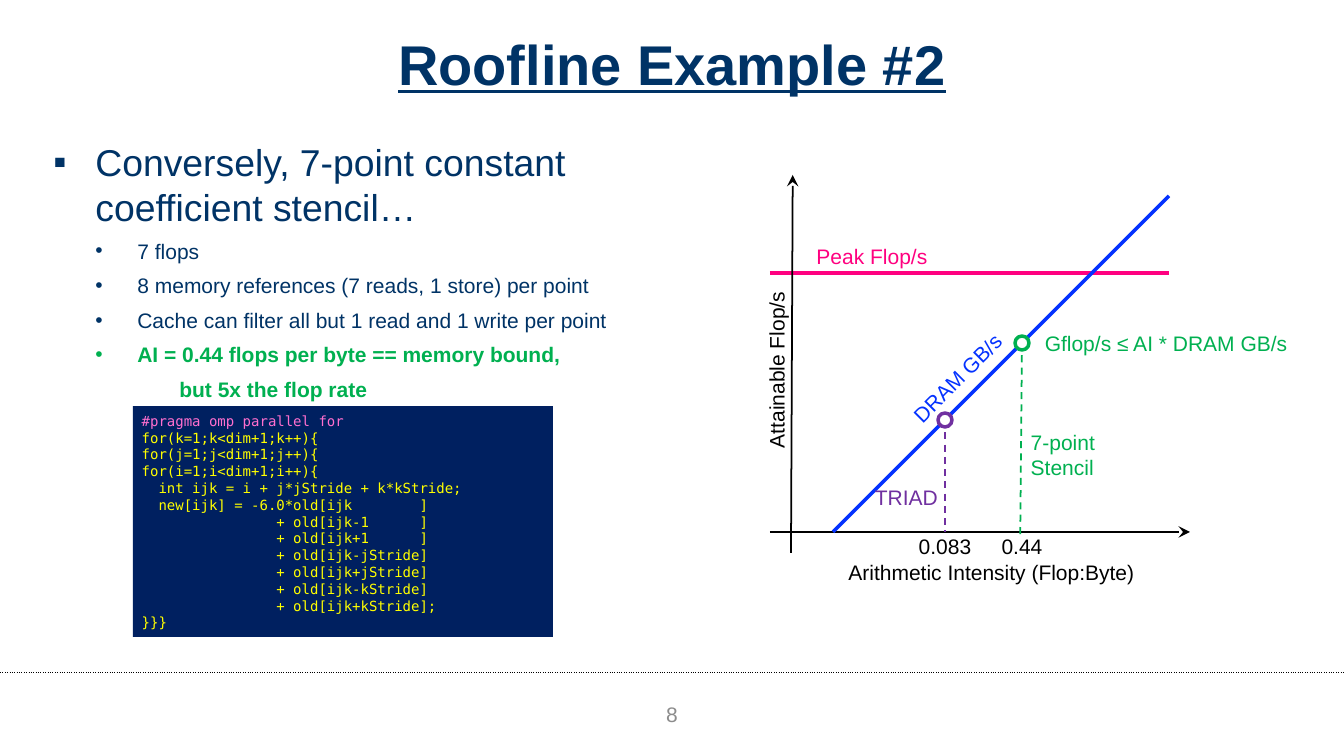
from pptx import Presentation
from pptx.dml.color import RGBColor
from pptx.enum.shapes import MSO_CONNECTOR, MSO_SHAPE
from pptx.enum.text import MSO_ANCHOR, PP_ALIGN
from pptx.oxml.ns import qn
from pptx.util import Pt
from lxml.etree import SubElement

PX = 9525
COLORS = {
    "title": "003366", "black": "000000", "white": "FFFFFF", "gray": "8C8C8C",
    "green": "00B050", "purple": "7030A0", "pink": "FF0080", "blue": "0432FF",
    "navy": "002060", "yellow": "FFFF00", "pragma": "FF6FCF",
}
WIDE = (13, 7, 13, 7)
CODE = """#pragma omp parallel for
for(k=1;k<dim+1;k++){
for(j=1;j<dim+1;j++){
for(i=1;i<dim+1;i++){
  int ijk = i + j*jStride + k*kStride;
  new[ijk] = -6.0*old[ijk        ]
                + old[ijk-1      ]
                + old[ijk+1      ]
                + old[ijk-jStride]
                + old[ijk+jStride]
                + old[ijk-kStride]
                + old[ijk+kStride];
}}}"""


def rgb(name):
    return RGBColor.from_string(COLORS[name])


def write(p, text, size=18, color="black", bold=False, underline=False,
          font="Arial", align=PP_ALIGN.LEFT, before=0, left=0, hang=0, bullet=None):
    """Fill one paragraph; left and hang are its indents in px."""
    p.alignment = align
    p.space_before = Pt(before)
    pPr = p._p.get_or_add_pPr()
    pPr.set("marL", str(left * PX))
    pPr.set("indent", str(-hang * PX))
    if bullet:
        SubElement(pPr, qn("a:buFont")).set("typeface", "Arial")
        SubElement(pPr, qn("a:buChar")).set("char", bullet)
    else:
        SubElement(pPr, qn("a:buNone"))
    r = p.add_run()
    r.text = text
    f = r.font
    f.name, f.size, f.bold, f.underline = font, Pt(size), bold, underline
    f.color.rgb = rgb(color)


class Deck:
    def __init__(self, width, height):
        self.prs = Presentation()
        self.prs.slide_width, self.prs.slide_height = width * PX, height * PX
        self.s = self.prs.slides.add_slide(self.prs.slide_layouts[5])

    def frame(self, sp, insets, anchor, wrap):
        tf = sp.text_frame
        tf.margin_left, tf.margin_top, tf.margin_right, tf.margin_bottom = (
            v * PX for v in insets)
        tf.vertical_anchor, tf.word_wrap = anchor, wrap
        return tf

    def title(self, text, x, y, w, h):
        sp = self.s.shapes.title
        sp.left, sp.top, sp.width, sp.height = (v * PX for v in (x, y, w, h))
        tf = self.frame(sp, WIDE, MSO_ANCHOR.MIDDLE, True)
        write(tf.paragraphs[0], text, size=48, color="title", bold=True,
              underline=True, align=PP_ALIGN.CENTER)

    def fill_lines(self, tf, lines, **fmt):
        """Write lines given as plain text or as (text, format) pairs."""
        for i, line in enumerate(lines):
            text, own = (line, {}) if isinstance(line, str) else line
            p = tf.add_paragraph() if i else tf.paragraphs[0]
            write(p, text, **{**fmt, **own})

    def text(self, lines, x, y, w, h, insets=(10, 5, 10, 5), anchor=MSO_ANCHOR.MIDDLE,
             wrap=True, rotation=0, **fmt):
        sp = self.s.shapes.add_textbox(x * PX, y * PX, w * PX, h * PX)
        sp.rotation = rotation
        self.fill_lines(self.frame(sp, insets, anchor, wrap), lines, **fmt)

    def shape(self, kind, x, y, w, h, fill, line=None):
        sp = self.s.shapes.add_shape(kind, x * PX, y * PX, w * PX, h * PX)
        sp.shadow.inherit = False
        sp.fill.solid()
        sp.fill.fore_color.rgb = rgb(fill)
        if line:
            sp.line.color.rgb, sp.line.width = rgb(line), Pt(3)
        else:
            sp.line.fill.background()
        return sp

    def line(self, x1, y1, x2, y2, color, width, dash=None, arrow=False):
        c = self.s.shapes.add_connector(
            MSO_CONNECTOR.STRAIGHT, x1 * PX, y1 * PX, x2 * PX, y2 * PX)
        c.line.color.rgb, c.line.width = rgb(color), Pt(width)
        ln = c._element.spPr.find(qn("a:ln"))
        if dash:
            SubElement(ln, qn("a:prstDash")).set("val", dash)
        if arrow:
            SubElement(ln, qn("a:tailEnd"), type="stealth", w="lg", len="lg")
        SubElement(c._element.spPr, qn("a:effectLst"))

    def code(self, source, x, y, w, h):
        sp = self.shape(MSO_SHAPE.RECTANGLE, x, y, w, h, "navy")
        tf = self.frame(sp, (10, 5, 10, 5), MSO_ANCHOR.MIDDLE, True)
        pragma, *loops = source.split("\n")
        self.fill_lines(tf, [(pragma, {"color": "pragma"}), *loops],
                        size=12, color="yellow", font="DejaVu Sans Mono")

    def kernel(self, x, y, foot_x, foot_y, color):
        """Mark a kernel on the roofline, with a dashed drop to the axis."""
        self.line(x, y, foot_x, foot_y, color, 1.5, dash="dash")
        self.shape(MSO_SHAPE.OVAL, x - 8, y - 8, 16, 16, "white", color)


def main():
    d = Deck(1536, 864)
    center = {"align": PP_ALIGN.CENTER}
    side = {"insets": (10, 0, 0, 0), "wrap": False}
    flat = {"insets": (0, 0, 0, 0), **center}

    d.line(0, 768, 1536, 768, "black", 0.5, dash="dot")
    d.title("Roofline Example #2", 48, 0, 1440, 144)

    item = {"before": 8, "left": 96, "hang": 48, "bullet": "•"}
    result = {"color": "green", "bold": True}
    d.text([
        ("Conversely, 7-point constant coefficient stencil…",
         {"size": 32, "left": 48, "hang": 48, "bullet": "▪"}),
        ("7 flops", item),
        ("8 memory references (7 reads, 1 store) per point", item),
        ("Cache can filter all but 1 read and 1 write per point", item),
        ("AI = 0.44 flops per byte == memory bound,", {**item, **result}),
        ("but 5x the flop rate", {"before": 8, "left": 144, **result}),
    ], 48, 152, 720, 160, insets=WIDE, anchor=MSO_ANCHOR.TOP, color="title")
    d.text(["8"], 624, 792, 288, 48, insets=WIDE, color="gray", **center)

    # Ceilings and axes
    d.line(880, 312, 1336, 312, "pink", 3)
    d.text(["Peak Flop/s"], 923, 274, 147, 38, wrap=False, color="pink", **center)
    d.line(880, 608, 1360, 608, "black", 1.5, arrow=True)
    d.line(904, 632, 906, 200, "black", 1.5, arrow=True)
    d.text(["Attainable Flop/s"], 703, 404, 368, 38, rotation=270, **center)
    d.line(952, 608, 1336, 224, "blue", 3)
    d.text(["DRAM GB/s"], 1018, 413, 152, 38, wrap=False, rotation=315,
           color="blue", **center)

    # Kernels
    d.kernel(1168, 392, 1166, 612, "green")
    d.text(["7-point", "Stencil"], 1168, 496, 96, 48, color="green", **side)
    d.text(["Gflop/s ≤ AI * DRAM GB/s"], 1184, 368, 320, 48, color="green", **side)
    d.kernel(1080, 480, 1080, 608, "purple")
    d.text(["TRIAD"], 976, 544, 96, 48, color="purple", align=PP_ALIGN.RIGHT, **side)

    d.code(CODE, 152, 464, 480, 264)
    d.text(["Arithmetic Intensity (Flop:Byte)"], 905, 640, 456, 32,
           insets=(0, 0, 0, 5), **center)
    for value, x in (("0.083", 1008), ("0.44", 1096)):
        d.text([value], x, 608, 144, 32, **flat)

    d.prs.save("out.pptx")


if __name__ == "__main__":
    main()
